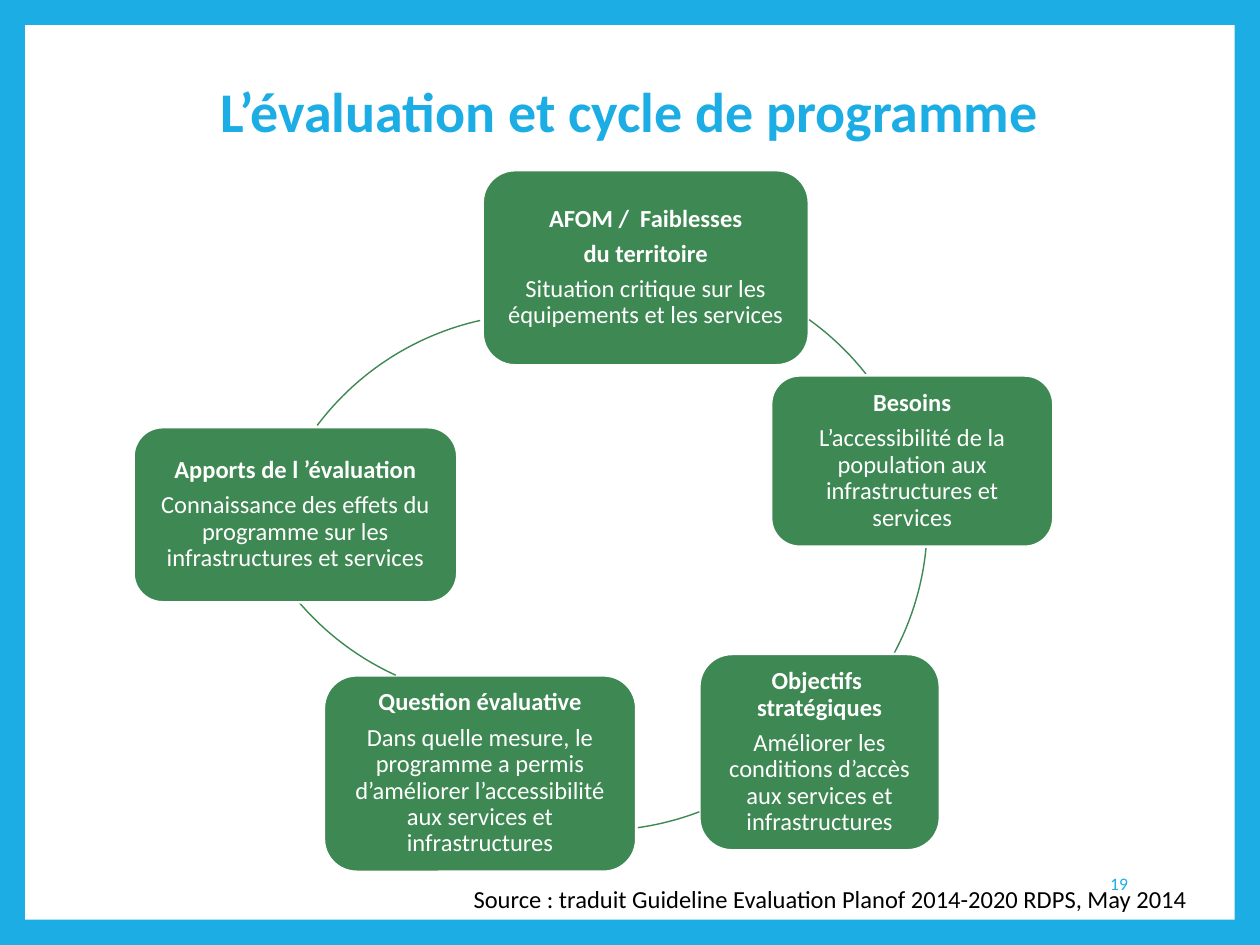
from dataclasses import dataclass
from math import atan2, degrees

from pptx import Presentation
from pptx.dml.color import RGBColor
from pptx.enum.shapes import MSO_SHAPE
from pptx.enum.text import MSO_ANCHOR, PP_ALIGN
from pptx.util import Inches, Pt

RECT, ROUNDED, ARC = MSO_SHAPE.RECTANGLE, MSO_SHAPE.ROUNDED_RECTANGLE, MSO_SHAPE.ARC
TOP, MIDDLE = MSO_ANCHOR.TOP, MSO_ANCHOR.MIDDLE
LEFT, CENTER, RIGHT = PP_ALIGN.LEFT, PP_ALIGN.CENTER, PP_ALIGN.RIGHT


@dataclass(frozen=True)
class Theme:
    font: str = "Calibri"
    blue: RGBColor = RGBColor(0x1C, 0xAD, 0xE4)
    green: RGBColor = RGBColor(0x3E, 0x88, 0x53)
    white: RGBColor = RGBColor(0xFF, 0xFF, 0xFF)
    black: RGBColor = RGBColor(0, 0, 0)
    title_size: float = 32
    body_size: float = 14
    number_size: float = 10
    box_line: float = 1.5
    arc_line: float = 0.79


THEME = Theme()
SLIDE_W, SLIDE_H, BORDER = 10, 7.5, 0.2
CIRCLE = 4.45  # diameter shared by all the arcs
BOX_INSET = 0.06

TITLE = "L’évaluation et cycle de programme"
SOURCE = "Source : traduit Guideline Evaluation Planof 2014-2020 RDPS, May 2014"
PAGE_NUMBER = "19"

# Each step: headings, detail, box (left, top, width, height),
# then its arc: circle corner and the two ends, clockwise
STEPS = [
    (["AFOM /  Faiblesses", "du territoire"],
     "Situation critique sur les équipements et les services",
     (3.83, 1.35, 2.59, 1.55), (2.9, 2.12), (6.42, 2.54), (6.87, 2.97)),
    (["Besoins"],
     "L’accessibilité de la population aux infrastructures et services",
     (6.12, 2.98, 2.24, 1.36), (2.91, 1.91), (7.34, 4.35), (7.09, 5.18)),
    (["Objectifs  stratégiques"],
     "Améliorer les conditions d’accès aux services et infrastructures",
     (5.55, 5.19, 1.91, 1.56), (2.53, 2.14), (5.55, 6.44), (5.06, 6.57)),
    (["Question évaluative"],
     "Dans quelle mesure, le programme a permis d’améliorer l’accessibilité "
     "aux services et infrastructures",
     (2.57, 5.36, 2.48, 1.56), (1.84, 1.11), (3.14, 5.36), (2.37, 4.78)),
    (["Apports de l ’évaluation"],
     "Connaissance des effets du programme sur les infrastructures et services",
     (1.06, 3.39, 2.57, 1.39), (2.07, 2.49), (2.51, 3.37), (3.81, 2.54)),
]


def add_paragraph(frame, text, size, color, align, bold=False, first=False):
    paragraph = frame.paragraphs[0] if first else frame.add_paragraph()
    paragraph.alignment = align
    run = paragraph.add_run()
    run.text = text
    run.font.name, run.font.size, run.font.bold = THEME.font, Pt(size), bold
    run.font.color.rgb = color
    return paragraph


def add_label(slide, area, text, size, color, align, anchor, bold=False, wrap=True):
    frame = slide.shapes.add_textbox(*map(Inches, area)).text_frame
    frame.word_wrap, frame.vertical_anchor = wrap, anchor
    return add_paragraph(frame, text, size, color, align, bold, first=True)


def add_panel(slide):
    panel = slide.shapes.add_shape(
        RECT, Inches(BORDER), Inches(BORDER),
        Inches(SLIDE_W - 2 * BORDER), Inches(SLIDE_H - 2 * BORDER))
    panel.shadow.inherit = False
    panel.fill.solid()
    panel.fill.fore_color.rgb = THEME.white
    panel.line.fill.background()


def add_step_box(slide, headings, detail, area):
    box = slide.shapes.add_shape(ROUNDED, *map(Inches, area))
    box.shadow.inherit = False
    box.fill.solid()
    box.fill.fore_color.rgb = THEME.green
    box.line.color.rgb, box.line.width = THEME.white, Pt(THEME.box_line)
    frame = box.text_frame
    frame.word_wrap, frame.vertical_anchor = True, MIDDLE
    frame.margin_left = frame.margin_right = Inches(BOX_INSET)
    frame.margin_top = frame.margin_bottom = Inches(BOX_INSET)
    for index, text in enumerate([*headings, detail]):
        paragraph = add_paragraph(frame, text, THEME.body_size, THEME.white, CENTER,
                                  bold=index < len(headings), first=index == 0)
        paragraph.line_spacing = 0.9
        paragraph.space_after = Pt(0.35 * THEME.body_size)


def add_cycle_arc(slide, corner, start, end):
    """Draw the part of the circle that runs clockwise from start to end."""
    arc = slide.shapes.add_shape(ARC, *map(Inches, (*corner, CIRCLE, CIRCLE)))
    arc.shadow.inherit = False
    arc.fill.background()
    arc.line.color.rgb, arc.line.width = THEME.green, Pt(THEME.arc_line)
    center_x, center_y = (edge + CIRCLE / 2 for edge in corner)
    for index, (x, y) in enumerate((start, end)):
        angle = degrees(atan2(y - center_y, x - center_x)) % 360
        arc.adjustments[index] = angle * 0.6  # 60000 units a degree, over 100000


def main():
    deck = Presentation()
    deck.slide_width, deck.slide_height = Inches(SLIDE_W), Inches(SLIDE_H)
    slide = deck.slides.add_slide(deck.slide_layouts[6])
    slide.background.fill.solid()
    slide.background.fill.fore_color.rgb = THEME.blue
    add_panel(slide)

    title = add_label(slide, (0.35, 0.44, 9.29, 0.94), TITLE, THEME.title_size,
                      THEME.blue, CENTER, MIDDLE, bold=True)
    title.line_spacing = 0.9
    for headings, detail, area, corner, start, end in STEPS:
        add_step_box(slide, headings, detail, area)
        add_cycle_arc(slide, corner, start, end)
    add_label(slide, (3.66, 6.97, 5.98, 0.34), SOURCE, THEME.body_size,
              THEME.black, LEFT, TOP, wrap=False)
    add_label(slide, (7.65, 6.81, 1.4, 0.4), PAGE_NUMBER, THEME.number_size,
              THEME.blue, RIGHT, MIDDLE)
    deck.save("out.pptx")


if __name__ == "__main__":
    main()
